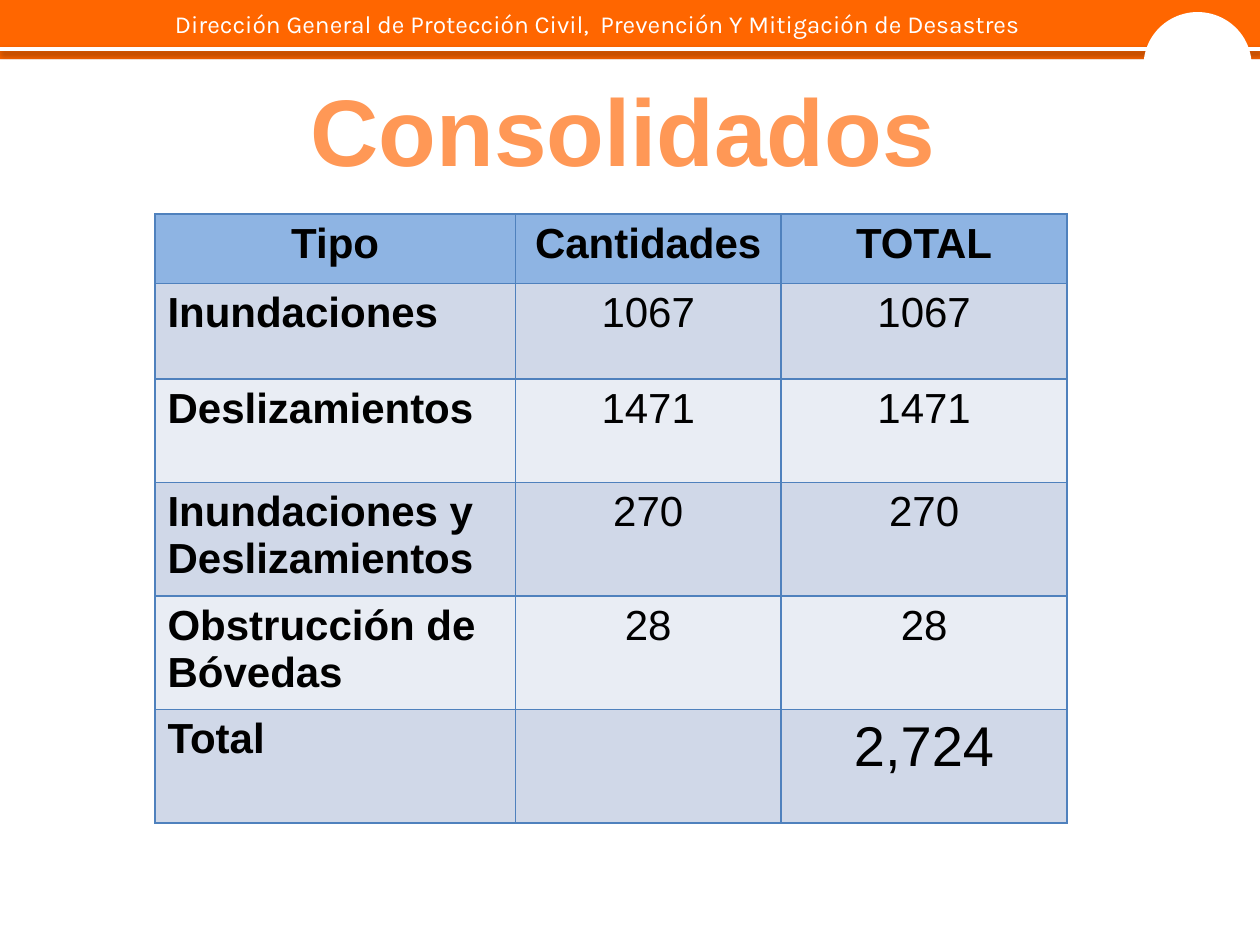
from lxml import etree
from pptx import Presentation
from pptx import util as u
from pptx.dml.color import RGBColor
from pptx.enum import shapes, text
from pptx.oxml import parse_xml
from pptx.oxml.ns import nsdecls, qn

HEADER = "Dirección General de Protección Civil,  Prevención Y Mitigación de Desastres"
TITLE = "Consolidados"
ROWS = [
    ("Tipo", "Cantidades", "TOTAL"),
    ("Inundaciones", "1067", "1067"),
    ("Deslizamientos", "1471", "1471"),
    ("Inundaciones y Deslizamientos", "270", "270"),
    ("Obstrucción de Bóvedas", "28", "28"),
    ("Total", "", "2,724"),
]
COLUMN_WIDTHS = [2.86, 2.11, 2.27]
ROW_HEIGHTS = [0.55, 0.76, 0.82, 0.9, 0.9, 0.9]
TABLE_LEFT, TABLE_TOP = 1.23, 1.7
WIDTH, HEIGHT = 10, 7.5

ORANGE = RGBColor(0xFF, 0x66, 0x00)
PEACH = RGBColor(0xFF, 0x98, 0x56)
WHITE = RGBColor(0xFF, 0xFF, 0xFF)
BLACK = RGBColor(0, 0, 0)
HEAD_BLUE = RGBColor(0x8E, 0xB4, 0xE3)
BANDS = [RGBColor(0xE9, 0xED, 0xF4), RGBColor(0xD0, 0xD8, 0xE8)]
BORDER = RGBColor(0x4F, 0x81, 0xBD)

LEFT, CENTER = text.PP_ALIGN.LEFT, text.PP_ALIGN.CENTER


def inches(*values):
    return [u.Inches(value) for value in values]


def add_span(para, words, size, color, font="Arial", bold=False, align=LEFT):
    para.alignment = align
    span = para.add_run()
    span.text = words
    span.font.name, span.font.size, span.font.bold = font, u.Pt(size), bold
    span.font.color.rgb = color


def add_plain_shape(page, kind, place, fill, line=None):
    shape = page.shapes.add_shape(kind, *inches(*place))
    shape.shadow.inherit = False
    shape.fill.solid()
    shape.fill.fore_color.rgb = fill
    if line is None:
        shape.line.fill.background()
    else:
        shape.line.color.rgb, shape.line.width = line, u.Pt(2)


def add_text(page, place, words, size, color, wrap=True, **style):
    frame = page.shapes.add_textbox(*inches(*place)).text_frame
    frame.word_wrap = wrap
    add_span(frame.paragraphs[0], words, size, color, **style)


def add_rule(page):
    rule = page.shapes.add_connector(
        shapes.MSO_CONNECTOR.STRAIGHT, *inches(0, 0.39, WIDTH, 0.39))
    rule.line.color.rgb, rule.line.width = WHITE, u.Pt(2)
    rule._element.spPr.append(parse_xml(
        f'<a:effectLst {nsdecls("a")}><a:outerShdw blurRad="40000" dist="20000" '
        'dir="5400000" rotWithShape="0"><a:srgbClr val="000000">'
        '<a:alpha val="38000"/></a:srgbClr></a:outerShdw></a:effectLst>'))


def add_borders(cell):
    properties = cell._tc.get_or_add_tcPr()
    for index, side in enumerate(("lnL", "lnR", "lnT", "lnB")):
        line = etree.Element(qn(f"a:{side}"), w=str(u.Pt(1)))
        fill = etree.SubElement(line, qn("a:solidFill"))
        etree.SubElement(fill, qn("a:srgbClr"), val=str(BORDER))
        properties.insert(index, line)


def add_totals(page):
    table = page.shapes.add_table(
        len(ROWS), len(COLUMN_WIDTHS),
        *inches(TABLE_LEFT, TABLE_TOP, sum(COLUMN_WIDTHS), sum(ROW_HEIGHTS))).table
    for column, width in zip(table.columns, COLUMN_WIDTHS):
        column.width = u.Inches(width)
    for row, height in zip(table.rows, ROW_HEIGHTS):
        row.height = u.Inches(height)
    for r, values in enumerate(ROWS):
        for c, value in enumerate(values):
            cell = table.cell(r, c)
            cell.fill.solid()
            cell.fill.fore_color.rgb = BANDS[r % 2] if r else HEAD_BLUE
            add_borders(cell)
            if value:
                grand_total = r == len(ROWS) - 1 and c > 0
                add_span(cell.text_frame.paragraphs[0], value,
                         32 if grand_total else 24, BLACK,
                         bold=r == 0 or c == 0,
                         align=LEFT if r and c == 0 else CENTER)


def main():
    deck = Presentation()
    deck.slide_width, deck.slide_height = inches(WIDTH, HEIGHT)
    page = deck.slides.add_slide(deck.slide_layouts[6])
    add_plain_shape(page, shapes.MSO_SHAPE.RECTANGLE, (0, 0, WIDTH, 0.47), ORANGE)
    add_rule(page)
    add_text(page, (1.29, 0.02, 8.91, 0.33), HEADER, 14, WHITE, font="Karla")
    add_plain_shape(page, shapes.MSO_SHAPE.OVAL, (9.09, 0.11, 0.83, 0.82), WHITE, WHITE)
    add_text(page, (2.34, 0.52, 5.21, 1.01), TITLE, 54, PEACH,
             wrap=False, bold=True, align=CENTER)
    add_totals(page)
    deck.save("out.pptx")


if __name__ == "__main__":
    main()
